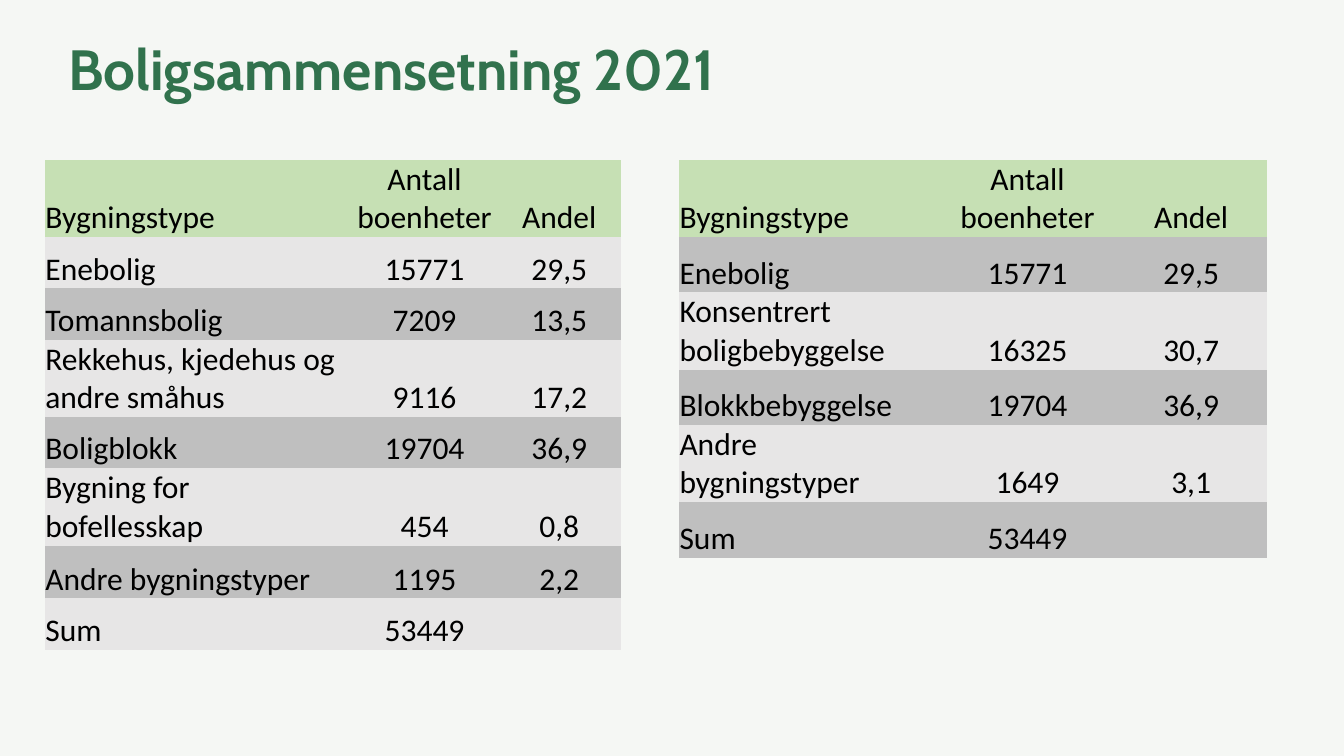
from pptx import Presentation
from pptx.dml.color import RGBColor
from pptx.enum.text import MSO_ANCHOR, MSO_AUTO_SIZE, PP_ALIGN
from pptx.util import Pt

PX = 4572  # EMU per px, 200 px to the inch
SLIDE_WIDTH, SLIDE_HEIGHT = 21666200, 12193588  # EMU
BOTTOM = MSO_ANCHOR.BOTTOM
NO_AUTOFIT = MSO_AUTO_SIZE.NONE
LEFT, CENTER = PP_ALIGN.LEFT, PP_ALIGN.CENTER
PLAIN_TABLE = "{2D5ABB26-0587-4C30-8999-92F81FD0307C}"

HEADER_GREEN, LIGHT_GREY, DARK_GREY = "C6E0B4", "E7E6E6", "BFBFBF"
HEADINGS = ("Bygningstype", "Antall boenheter", "Andel")
DETAILED_TYPES = [
    HEADINGS,
    ("Enebolig", "15771", "29,5"),
    ("Tomannsbolig", "7209", "13,5"),
    ("Rekkehus, kjedehus og andre småhus", "9116", "17,2"),
    ("Boligblokk", "19704", "36,9"),
    ("Bygning for bofellesskap", "454", "0,8"),
    ("Andre bygningstyper", "1195", "2,2"),
    ("Sum", "53449", ""),
]
GROUPED_TYPES = [
    HEADINGS,
    ("Enebolig", "15771", "29,5"),
    ("Konsentrert boligbebyggelse", "16325", "30,7"),
    ("Blokkbebyggelse", "19704", "36,9"),
    ("Andre bygningstyper", "1649", "3,1"),
    ("Sum", "53449", ""),
]


def color(hex_code):
    return RGBColor.from_string(hex_code)


def px(*lengths):
    return [length * PX for length in lengths]


class HousingSlide:
    title_font, table_font = "Cabin", "Calibri"
    title_size, table_size = Pt(72), Pt(40)

    def __init__(self, presentation, background):
        self.slide = presentation.slides.add_slide(presentation.slide_layouts[5])
        fill = self.slide.background.fill
        fill.solid()
        fill.fore_color.rgb = color(background)

    def style(self, paragraph, font_name, size, hex_code, align, bold=False):
        paragraph.alignment = align
        font = paragraph.font
        font.name, font.size, font.bold = font_name, size, bold
        font.color.rgb = color(hex_code)

    def title(self, wording, box):
        heading = self.slide.shapes.title
        heading.left, heading.top, heading.width, heading.height = px(*box)
        frame = heading.text_frame
        frame.text = wording
        frame.word_wrap = True
        frame.auto_size = NO_AUTOFIT
        frame.vertical_anchor = BOTTOM
        frame.margin_left = frame.margin_right = 0
        frame.margin_top = frame.margin_bottom = 0
        line = frame.paragraphs[0]
        line.line_spacing = Pt(80)
        self.style(line, self.title_font, self.title_size, "31724D", LEFT, True)

    def table(self, rows, box, column_widths, row_heights, bands):
        frame = self.slide.shapes.add_table(len(rows), len(rows[0]), *px(*box))
        table = frame.table
        table.first_row = table.horz_banding = False
        table._tbl.tblPr[0].text = PLAIN_TABLE
        for column, width in zip(table.columns, px(*column_widths)):
            column.width = width
        for row, height in zip(table.rows, px(*row_heights)):
            row.height = height
        frame.height = box[3] * PX
        for r, values in enumerate(rows):
            fill = bands[(r - 1) % 2] if r else HEADER_GREEN
            for c, value in enumerate(values):
                self.cell(table.cell(r, c), value, fill, CENTER if c else LEFT)

    def cell(self, cell, value, fill, align):
        cell.fill.solid()
        cell.fill.fore_color.rgb = color(fill)
        cell.vertical_anchor = BOTTOM
        cell.margin_left = cell.margin_right = cell.margin_top = 2 * PX
        cell.margin_bottom = 0
        cell.text = value
        self.style(cell.text_frame.paragraphs[0], self.table_font,
                   self.table_size, "000000", align)


def main():
    presentation = Presentation()
    presentation.slide_width = SLIDE_WIDTH
    presentation.slide_height = SLIDE_HEIGHT
    housing = HousingSlide(presentation, "F5F7F4")

    # Heading
    housing.title("Boligsammensetning 2021", (240, 36, 3898, 322))

    # Every building type on the left, grouped types on the right
    housing.table(DETAILED_TYPES, (158, 564, 2030, 1714), (1080, 518, 432),
                  [181] * 6 + [186, 181], (LIGHT_GREY, DARK_GREY))
    housing.table(GROUPED_TYPES, (2394, 564, 2074, 1390), (918, 622, 532),
                  [195] * 6, (DARK_GREY, LIGHT_GREY))

    presentation.save("out.pptx")


if __name__ == "__main__":
    main()
